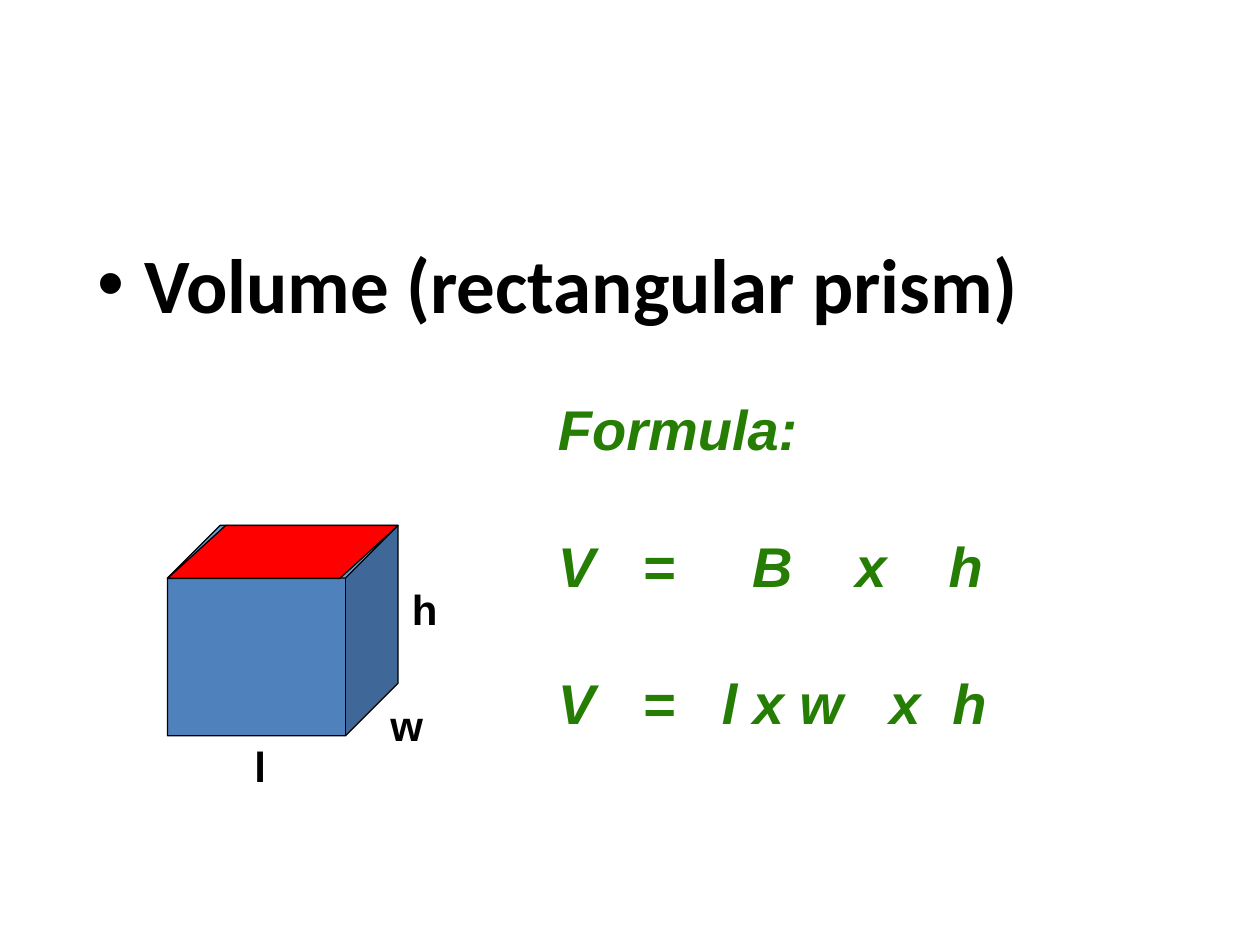
from typing import NamedTuple

from lxml import etree
from pptx import Presentation
from pptx import util as u
from pptx.dml.color import RGBColor
from pptx.enum import shapes, text
from pptx.oxml import ns

BLACK = RGBColor(0x00, 0x00, 0x00)
GREEN = RGBColor(0x26, 0x7D, 0x03)
BLUE = RGBColor(0x4F, 0x81, 0xBD)
RED = RGBColor(0xFF, 0x00, 0x00)

PRISM_LEFT, PRISM_TOP, PRISM_WIDTH, PRISM_HEIGHT = 1.33, 4.17, 1.83, 1.67
PRISM_DEPTH = 0.42


class Label(NamedTuple):
    wording: str
    left: float
    top: float
    width: float


class Formula(NamedTuple):
    wording: str
    tab_stops: tuple[float, ...] = ()


LABELS = [
    Label("l", 1.92, 5.83, 0.29),
    Label("w", 3.0, 5.5, 0.46),
    Label("h", 3.17, 4.58, 0.4),
]
FORMULAS = [
    Formula("Formula:"),
    Formula("V\t=\tB\tx\th", (0.67, 1.54, 2.36, 3.1)),
    Formula("V\t=\tl x w\tx\th", (0.67, 1.3, 2.63, 3.13)),
]


def set_font(para, name: str, size: int, color: RGBColor, italic: bool = False) -> None:
    font = para.font
    font.name, font.size = name, u.Pt(size)
    font.bold, font.italic = True, italic
    font.color.rgb = color


def add_tab_stops(para, stops: tuple[float, ...]) -> None:
    properties = para._p.get_or_add_pPr()
    tab_list = etree.Element(ns.qn("a:tabLst"))
    for stop in stops:
        etree.SubElement(tab_list, ns.qn("a:tab"), pos=str(u.Inches(stop)), algn="l")
    properties.insert_element_before(tab_list, "a:defRPr", "a:extLst")


def add_heading(slide) -> None:
    body = slide.placeholders[1]
    body.left, body.top = u.Inches(0.67), u.Inches(1.83)
    body.width, body.height = u.Inches(8.83), u.Inches(1.17)
    para = body.text_frame.paragraphs[0]
    para.text = "Volume (rectangular prism)"
    set_font(para, "Calibri", 44, BLACK)


def add_formulas(slide) -> None:
    box = slide.shapes.add_textbox(
        u.Inches(4.33), u.Inches(3.08), u.Inches(5.02), u.Inches(2.77))
    frame = box.text_frame
    frame.word_wrap = True
    for index, formula in enumerate(FORMULAS):
        para = frame.add_paragraph() if index else frame.paragraphs[0]
        para.text = formula.wording
        para.space_before = u.Pt(40 if index else 0)
        set_font(para, "Arial", 32, GREEN, italic=True)
        if formula.tab_stops:
            add_tab_stops(para, formula.tab_stops)


def add_label(slide, label: Label) -> None:
    box = slide.shapes.add_textbox(
        u.Inches(label.left), u.Inches(label.top), u.Inches(label.width), u.Inches(0.5))
    frame = box.text_frame
    frame.word_wrap = False
    frame.auto_size = text.MSO_AUTO_SIZE.SHAPE_TO_FIT_TEXT
    para = frame.paragraphs[0]
    para.text = label.wording
    set_font(para, "Arial", 24, BLACK)


def add_solid(slide, kind: shapes.MSO_SHAPE, height: float, slant: float,
              color: RGBColor) -> None:
    """Draw a shape that shares the prism's top left corner and width."""
    shape = slide.shapes.add_shape(
        kind, u.Inches(PRISM_LEFT), u.Inches(PRISM_TOP),
        u.Inches(PRISM_WIDTH), u.Inches(height))
    shape.adjustments[0] = slant
    shape.shadow.inherit = False
    shape.fill.solid()
    shape.fill.fore_color.rgb = color
    shape.line.color.rgb = BLACK
    shape.line.width = u.Pt(0.75)


def main() -> None:
    deck = Presentation()
    deck.slide_width, deck.slide_height = u.Inches(10), u.Inches(7.5)
    slide = deck.slides.add_slide(deck.slide_layouts[1])
    title = slide.shapes.title.element
    title.getparent().remove(title)

    add_heading(slide)
    add_formulas(slide)
    for label in LABELS:
        add_label(slide, label)
    add_solid(slide, shapes.MSO_SHAPE.CUBE, PRISM_HEIGHT, 0.25, BLUE)
    add_solid(slide, shapes.MSO_SHAPE.PARALLELOGRAM, PRISM_DEPTH, 1.1, RED)
    deck.save("out.pptx")


if __name__ == "__main__":
    main()
